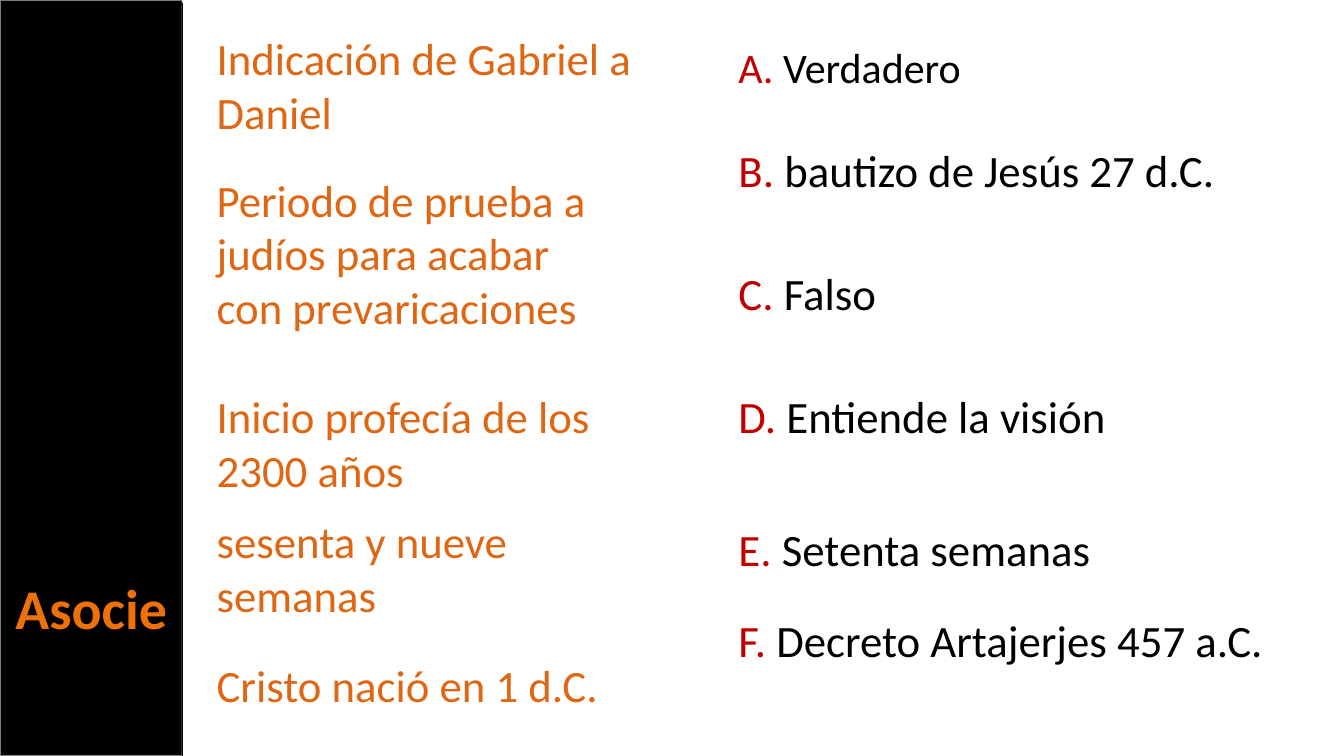
from dataclasses import dataclass

from lxml import etree
from pptx import Presentation
from pptx import util as u
from pptx.dml.color import RGBColor
from pptx.enum import shapes, text
from pptx.oxml.ns import qn


@dataclass(frozen=True)
class Theme:
    font: str = "Calibri"
    black: str = "000000"
    edge: str = "F9F9F9"
    clue: str = "DF6613"
    mark: str = "C00000"
    head: str = "EE7008"
    small: int = 30
    body: int = 32
    big: int = 40


@dataclass(frozen=True)
class Box:
    left: float
    top: float
    width: float
    height: float

    def place(self, item):
        item.left, item.top = u.Cm(self.left), u.Cm(self.top)
        item.width, item.height = u.Cm(self.width), u.Cm(self.height)


THEME = Theme()
WIDE, HIGH = 33.87, 19.05

CLUES = [
    (0.66, 11.66, 2, "Indicación de Gabriel a Daniel"),
    (4.22, 10.49, 3, "Periodo de prueba a judíos para acabar con prevaricaciones"),
    (9.68, 10.49, 2, "Inicio profecía de los 2300 años"),
    (12.83, 11.15, 2, "sesenta y nueve semanas"),
    (16.46, 11.66, 1, "Cristo nació en 1 d.C."),
]
ANSWERS = [
    (0.91, 10.62, THEME.small, "Verdadero"),
    (3.48, 13.03, THEME.body, "bautizo de Jesús 27 d.C."),
    (6.58, 6.63, THEME.body, "Falso"),
    (9.68, 12.7, THEME.body, "Entiende la visión"),
    (13.03, 14.2, THEME.body, "Setenta semanas"),
    (15.32, 14.2, THEME.body, "Decreto Artajerjes 457 a.C."),
]


def write(item, runs, size=THEME.body, bold=False, align=text.PP_ALIGN.LEFT):
    frame = item.text_frame
    frame.word_wrap = True
    frame.auto_size = text.MSO_AUTO_SIZE.NONE
    frame.vertical_anchor = text.MSO_ANCHOR.TOP
    para = frame.paragraphs[0]
    para.alignment = align
    para.line_spacing = 1.0
    para.space_before = u.Pt(0)
    for words, color in runs:
        run = para.add_run()
        run.text = words
        run.font.name = THEME.font
        run.font.size = u.Pt(size)
        run.font.bold = bold
        run.font.color.rgb = RGBColor.from_string(color)


def label(slide, box, runs, **form):
    item = slide.shapes.add_textbox(0, 0, 0, 0)
    box.place(item)
    write(item, runs, **form)


def side_bar(slide, box):
    bar = slide.shapes.add_shape(shapes.MSO_SHAPE.RECTANGLE, 0, 0, 0, 0)
    box.place(bar)
    bar.shadow.inherit = False
    bar.fill.solid()
    bar.fill.fore_color.rgb = RGBColor.from_string(THEME.black)
    bar.line.color.rgb = RGBColor.from_string(THEME.edge)
    bar.line.width = u.Pt(1.35)
    tint = bar.element.spPr.find(".//" + qn("a:ln")).find(".//" + qn("a:srgbClr"))
    etree.SubElement(tint, qn("a:alpha")).set("val", "50000")

    title = slide.shapes.title
    title.element.addprevious(bar.element)
    Box(box.left, box.top + 14.32, box.width, 1.96).place(title)
    write(title, [("Asocie", THEME.head)], size=THEME.big, bold=True,
          align=text.PP_ALIGN.CENTER)

    right = u.Cm(box.left + box.width)
    rule = slide.shapes.add_connector(
        shapes.MSO_CONNECTOR.STRAIGHT,
        right, u.Cm(box.top + 0.08), right, u.Cm(box.top + box.height))
    rule.line.color.rgb = RGBColor.from_string(THEME.black)
    rule.line.width = u.Pt(0.85)
    etree.SubElement(rule.element.spPr, qn("a:effectLst"))


def clue_list(slide, box):
    for top, width, lines, words in CLUES:
        spot = Box(box.left, box.top + top, width, 0.25 + 1.37 * lines)
        label(slide, spot, [(words, THEME.clue)])


def answer_list(slide, box):
    for mark, (top, width, size, words) in zip("ABCDEF", ANSWERS):
        spot = Box(box.left, box.top + top, width, 1.62)
        label(slide, spot, [(mark + ". ", THEME.mark), (words, THEME.black)],
              size=size)


def main():
    deck = Presentation()
    deck.slide_width, deck.slide_height = u.Cm(WIDE), u.Cm(HIGH)
    slide = deck.slides.add_slide(deck.slide_layouts.get_by_name("Title Only"))
    side_bar(slide, Box(0, 0, 4.6, HIGH))
    clue_list(slide, Box(5.21, 0, 11.66, HIGH))
    answer_list(slide, Box(18.36, 0, 14.2, HIGH))
    deck.save("out.pptx")


if __name__ == "__main__":
    main()
